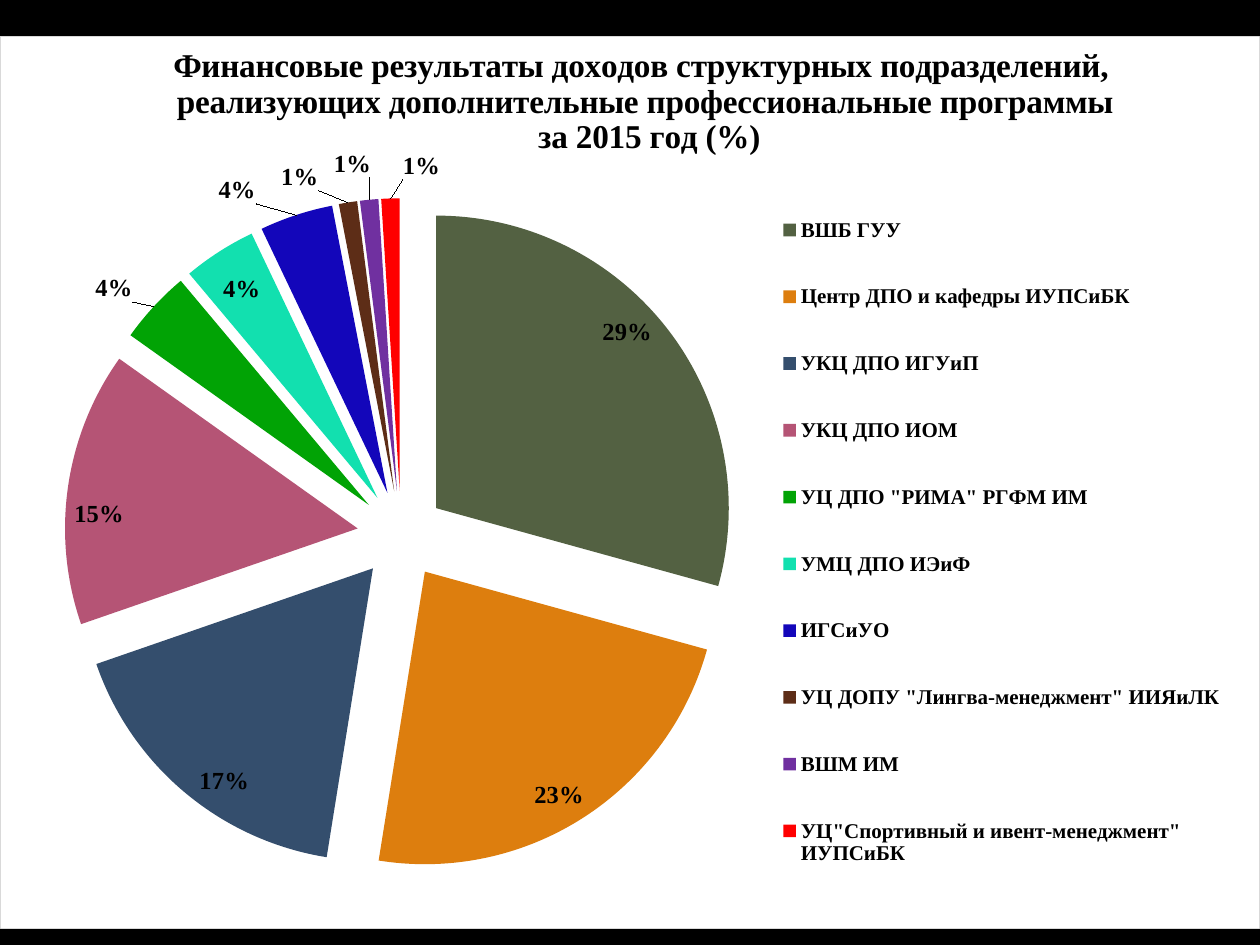
from pptx import Presentation
from pptx.chart.data import CategoryChartData
from pptx.dml.color import RGBColor
from pptx.enum.chart import XL_CHART_TYPE, XL_LABEL_POSITION, XL_LEGEND_POSITION
from pptx.enum.text import PP_ALIGN
from pptx.oxml import parse_xml
from pptx.oxml.ns import nsdecls, qn
from pptx.util import Pt

PX = 914400 // 126
CHART_W, CHART_H = 1260, 893
FONT = "Times New Roman"
COLORS = {"page": "000000", "panel": "FFFFFF", "border": "D9D9D9", "text": "000000"}
EDGES = '<c:xMode val="edge"/><c:yMode val="edge"/>'
TITLE = [
    "Финансовые результаты доходов структурных подразделений, ",
    "реализующих дополнительные профессиональные программы",
    " за 2015 год (%)",
]
UNITS = [
    ("ВШБ ГУУ", 29, "536142"),
    ("Центр ДПО и кафедры ИУПСиБК", 23, "DD7E0E"),
    ("УКЦ ДПО ИГУиП", 17, "344E6D"),
    ("УКЦ ДПО ИОМ", 15, "B55475"),
    ('УЦ ДПО "РИМА" РГФМ ИМ', 4, "01A305"),
    ("УМЦ ДПО ИЭиФ", 4, "12E0AF"),
    ("ИГСиУО", 4, "1306BA"),
    ('УЦ ДОПУ "Лингва-менеджмент" ИИЯиЛК', 1, "5D2D17"),
    ("ВШМ ИМ", 1, "7030A0"),
    ('УЦ"Спортивный и ивент-менеджмент" ИУПСиБК', 1, "FF0000"),
]
LABEL_SHIFTS = {
    0: (-11, -17), 1: (5, -3), 2: (10, 8), 3: (-1, 12), 4: (-64, -37),
    5: (0, 17), 6: (-80, -46), 7: (-68, -47), 8: (-36, -57), 9: (31, -54),
}


def rgb(name):
    return RGBColor.from_string(COLORS[name])


def style_font(font, size):
    font.name = FONT
    font.size = Pt(size)
    font.bold = True
    font.color.rgb = rgb("text")


def manual_layout(x, y, w=None, h=None, modes=""):
    sizes = "" if w is None else f'<c:w val="{w / CHART_W:.4f}"/><c:h val="{h / CHART_H:.4f}"/>'
    return parse_xml(
        f'<c:layout {nsdecls("c")}><c:manualLayout>{modes}'
        f'<c:x val="{x / CHART_W:.4f}"/><c:y val="{y / CHART_H:.4f}"/>{sizes}'
        "</c:manualLayout></c:layout>"
    )


def replace_layout(parent, layout, after=None):
    for old in parent.findall(qn("c:layout")):
        parent.remove(old)
    if after is None:
        parent.insert(0, layout)
    else:
        parent.find(qn(after)).addnext(layout)


def add_pie(slide):
    data = CategoryChartData()
    data.categories = [name for name, _, _ in UNITS]
    data.add_series("Series 1", [value for _, value, _ in UNITS])
    frame = slide.shapes.add_chart(
        XL_CHART_TYPE.PIE, 0, 36 * PX, CHART_W * PX, CHART_H * PX, data
    )
    return frame.chart


def style_panel(chart):
    chart.font.name = FONT
    chart.font.size = Pt(10)
    chart.element.find(qn("c:chart")).addnext(parse_xml(
        f'<c:spPr {nsdecls("c", "a")}>'
        f'<a:solidFill><a:srgbClr val="{COLORS["panel"]}"/></a:solidFill>'
        f'<a:ln w="9525"><a:solidFill><a:srgbClr val="{COLORS["border"]}"/></a:solidFill></a:ln>'
        "</c:spPr>"
    ))


def add_title(chart):
    title = chart.chart_title
    tf = title.text_frame
    title.include_in_layout = False
    for i, line in enumerate(TITLE):
        p = tf.paragraphs[0] if i == 0 else tf.add_paragraph()
        p.text = line
        p.alignment = PP_ALIGN.CENTER
        style_font(p.font, 19)
        style_font(p.runs[0].font, 19)
    replace_layout(title._element, manual_layout(169, 6, modes=EDGES), "c:tx")


def add_legend(chart):
    chart.has_legend = True
    legend = chart.legend
    legend.position = XL_LEGEND_POSITION.RIGHT
    legend.include_in_layout = False
    style_font(legend.font, 12)
    layout = manual_layout(775, 138, 454, 736, EDGES)
    replace_layout(legend._element, layout, "c:legendPos")


def style_slices(plot):
    series = plot.series[0]
    explosion = parse_xml(f'<c:explosion {nsdecls("c")} val="15"/>')
    series._element.find(qn("c:tx")).addnext(explosion)
    for i, (_, _, color) in enumerate(UNITS):
        fill = series.points[i].format.fill
        fill.solid()
        fill.fore_color.rgb = RGBColor.from_string(color)


def add_labels(plot):
    series = plot.series[0]
    labels = series.data_labels
    labels.show_percentage = True
    labels.show_value = False
    labels.number_format = "0%"
    labels.number_format_is_linked = False
    labels.position = XL_LABEL_POSITION.INSIDE_END
    style_font(labels.font, 14)
    leader = labels._element.find(qn("c:showLeaderLines"))
    if leader is None:
        labels._element.append(parse_xml(f'<c:showLeaderLines {nsdecls("c")} val="1"/>'))
    else:
        leader.set("val", "1")
    for i, shift in LABEL_SHIFTS.items():
        label = series.points[i].data_label
        style_font(label.font, 14)
        label.position = XL_LABEL_POSITION.INSIDE_END
        dlbl = labels._element.xpath(f'c:dLbl[c:idx/@val="{i}"]')[0]
        dlbl.find(qn("c:showVal")).set("val", "0")
        dlbl.find(qn("c:showPercent")).set("val", "1")
        replace_layout(dlbl, manual_layout(*shift), "c:idx")


def main():
    prs = Presentation()
    prs.slide_width, prs.slide_height = 1260 * PX, 945 * PX
    s = prs.slides.add_slide(prs.slide_layouts[6])
    s.background.fill.solid()
    s.background.fill.fore_color.rgb = rgb("page")
    chart = add_pie(s)
    style_panel(chart)
    add_title(chart)
    add_legend(chart)
    plot = chart.plots[0]
    plot.vary_by_categories = True
    modes = '<c:layoutTarget val="inner"/>' + EDGES
    plot_area = chart.element.find(qn("c:chart")).find(qn("c:plotArea"))
    replace_layout(plot_area, manual_layout(64, 107, 674, 784, modes))
    style_slices(plot)
    add_labels(plot)
    prs.save("out.pptx")


if __name__ == "__main__":
    main()
